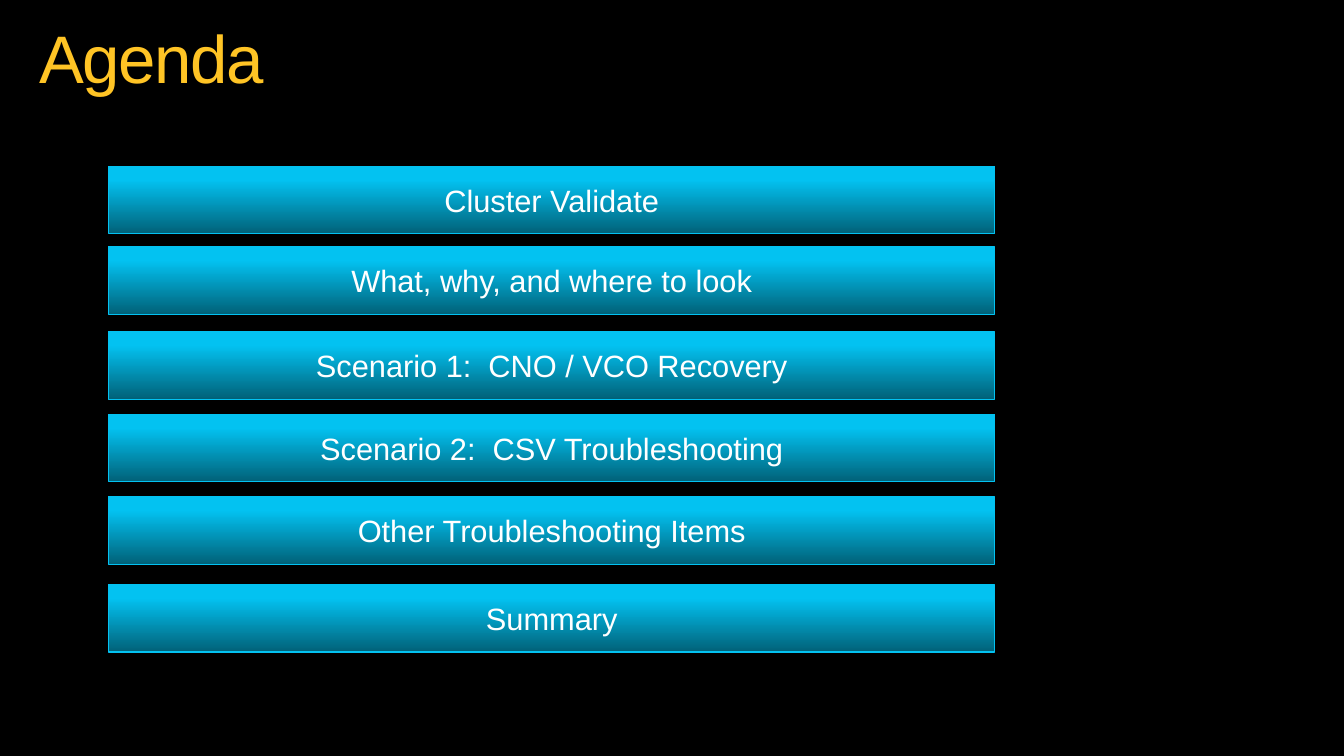
from pptx import Presentation
from pptx.dml.color import RGBColor
from pptx.enum.shapes import MSO_SHAPE
from pptx.enum.text import MSO_ANCHOR, MSO_AUTO_SIZE, PP_ALIGN
from pptx.util import Cm, Pt


def rgb(code):
    return RGBColor.from_string(code)


def write(shape, text, size, color, align, pad=(0, 0), line=1.0, track=0):
    frame = shape.text_frame
    frame.word_wrap = True
    frame.auto_size = MSO_AUTO_SIZE.NONE
    frame.vertical_anchor = MSO_ANCHOR.MIDDLE
    frame.margin_left = frame.margin_right = Cm(pad[0])
    frame.margin_top = frame.margin_bottom = Cm(pad[1])
    para = frame.paragraphs[0]
    para.alignment = align
    para.line_spacing = line
    run = para.add_run()
    run.text = text
    run.font.name = "Arial"
    run.font.size = Pt(size)
    run.font.color.rgb = rgb(color)
    if track:
        run.font._element.set("spc", str(track))


deck = Presentation()
deck.slide_width = Cm(33.87)
deck.slide_height = Cm(19.05)
slide = deck.slides.add_slide(deck.slide_layouts[5])
back = slide.background.fill
back.solid()
back.fore_color.rgb = rgb("000000")

title = slide.shapes.title
title.left, title.top = Cm(0.99), Cm(0.43)
title.width, title.height = Cm(25.91), Cm(2.26)
write(title, "Agenda", 48, "FFC425", PP_ALIGN.LEFT, line=0.9, track=-100)

items = [
    (4.19, "Cluster Validate"),
    (6.22, "What, why, and where to look"),
    (8.36, "Scenario 1:  CNO / VCO Recovery"),
    (10.44, "Scenario 2:  CSV Troubleshooting"),
    (12.52, "Other Troubleshooting Items"),
    (14.73, "Summary"),
]
for top, text in items:
    bar = slide.shapes.add_shape(
        MSO_SHAPE.ROUNDED_RECTANGLE, Cm(2.74), Cm(top), Cm(22.33), Cm(1.7))
    bar.adjustments[0] = 0
    bar.shadow.inherit = False
    bar.fill.gradient()
    bar.fill.gradient_angle = 90
    low, high = bar.fill.gradient_stops
    low.color.rgb, low.position = rgb("016178"), 0
    high.color.rgb, high.position = rgb("03C2F1"), 0.8
    bar.line.color.rgb = rgb("03C2F1")
    bar.line.width = Pt(0.75)
    write(bar, text, 22, "FFFFFF", PP_ALIGN.CENTER, pad=(0.25, 0.13))

deck.save("out.pptx")
